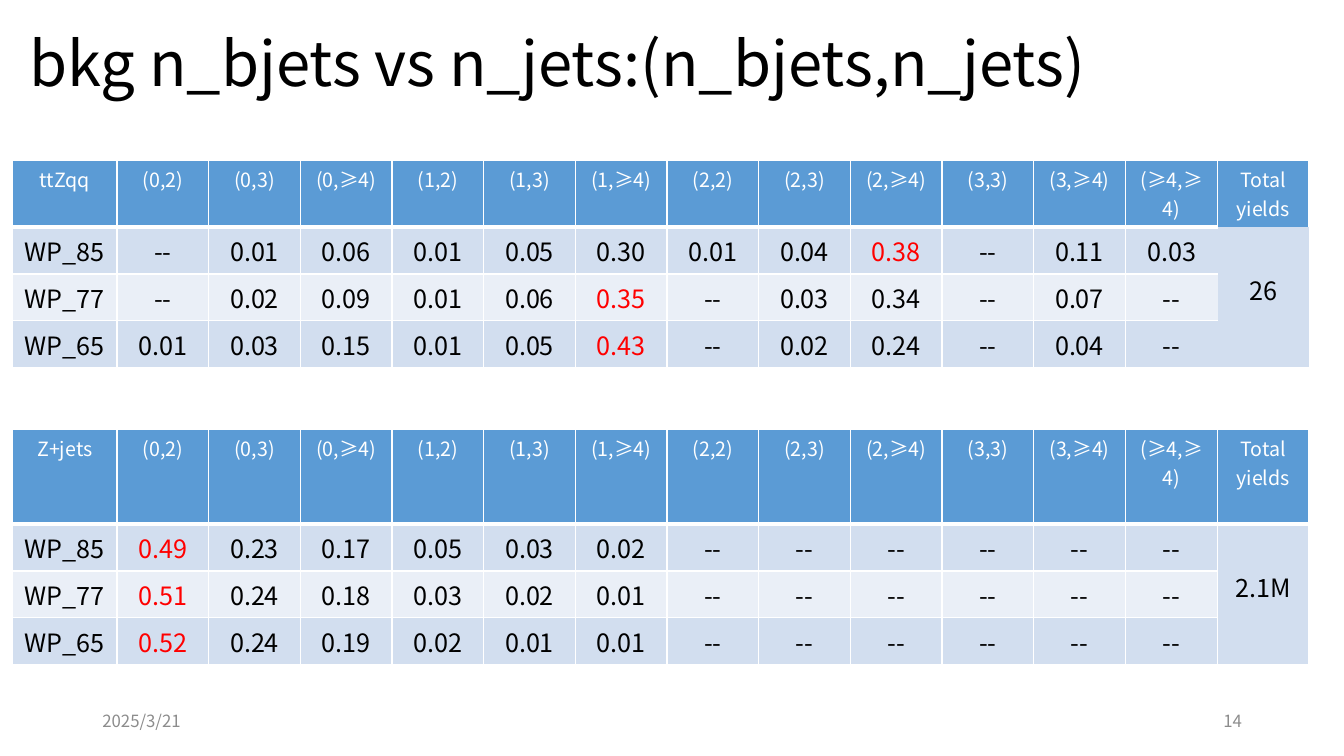
import pptx
import pptx.dml.color
import pptx.enum.text
import pptx.oxml
import pptx.oxml.ns
import pptx.util

Cm = pptx.util.Cm
Pt = pptx.util.Pt
RGBColor = pptx.dml.color.RGBColor
PP_ALIGN = pptx.enum.text.PP_ALIGN
MSO_ANCHOR = pptx.enum.text.MSO_ANCHOR

FONT = "Noto Sans CJK SC"
BLACK = RGBColor(0x00, 0x00, 0x00)
WHITE = RGBColor(0xFF, 0xFF, 0xFF)
RED = RGBColor(0xFF, 0x00, 0x00)
GREY = RGBColor(0x8C, 0x8C, 0x8C)
HEADER_BLUE = RGBColor(0x5B, 0x9B, 0xD5)
BANDS = [RGBColor(0xD2, 0xDE, 0xEF), RGBColor(0xEA, 0xEF, 0xF7)]

JET_BINS = ["(0,2)", "(0,3)", "(0,≥4)", "(1,2)", "(1,3)", "(1,≥4)", "(2,2)",
            "(2,3)", "(2,≥4)", "(3,3)", "(3,≥4)", "(≥4,≥4)"]
COLUMN_WIDTHS = [2.63] + [2.31] * 11 + [2.33, 2.29]
BODY_ROW_HEIGHT = 1.18
TTZQQ_FRACTIONS = {
    "WP_85": "-- 0.01 0.06 0.01 0.05 0.30 0.01 0.04 0.38 -- 0.11 0.03",
    "WP_77": "-- 0.02 0.09 0.01 0.06 0.35 -- 0.03 0.34 -- 0.07 --",
    "WP_65": "0.01 0.03 0.15 0.01 0.05 0.43 -- 0.02 0.24 -- 0.04 --",
}
ZJETS_FRACTIONS = {
    "WP_85": "0.49 0.23 0.17 0.05 0.03 0.02 -- -- -- -- -- --",
    "WP_77": "0.51 0.24 0.18 0.03 0.02 0.01 -- -- -- -- -- --",
    "WP_65": "0.52 0.24 0.19 0.02 0.01 0.01 -- -- -- -- -- --",
}


def set_attributes(target, values):
    for name, value in values.items():
        setattr(target, name, value)


def write_text(text_frame, text, size, color, **paragraph_format):
    paragraph = text_frame.paragraphs[0]
    set_attributes(paragraph, paragraph_format)
    run = paragraph.add_run()
    run.text = text
    set_attributes(run.font, {"name": FONT, "size": Pt(size), "bold": False})
    run.font.color.rgb = color
    east_asian = pptx.oxml.parse_xml(
        f'<a:ea {pptx.oxml.ns.nsdecls("a")} typeface="{FONT}"/>')
    run.font._element.find(pptx.oxml.ns.qn("a:latin")).addnext(east_asian)


def set_borders(cell, hidden="", bottom=1):
    """Draw white borders, leaving out the sides whose letters are in hidden."""
    properties = cell._tc.get_or_add_tcPr()
    for index, side in enumerate("LRTB"):
        width = Pt(bottom if side == "B" else 1)
        fill = ("<a:noFill/>" if side in hidden else
                f'<a:solidFill><a:srgbClr val="{WHITE}"/></a:solidFill>')
        properties.insert(index, pptx.oxml.parse_xml(
            f'<a:ln{side} {pptx.oxml.ns.nsdecls("a")} w="{width}">{fill}</a:ln{side}>'))


def fill_cell(cell, text, size, color, background):
    cell.fill.solid()
    cell.fill.fore_color.rgb = background
    write_text(cell.text_frame, text, size, color, alignment=PP_ALIGN.CENTER)


def add_title(slide, left, top, width, height, text):
    title = slide.shapes.title
    set_attributes(title, {"left": left, "top": top, "width": width, "height": height})
    set_attributes(title.text_frame, {
        "word_wrap": True,
        "auto_size": pptx.enum.text.MSO_AUTO_SIZE.NONE,
        "vertical_anchor": MSO_ANCHOR.MIDDLE,
    })
    write_text(title.text_frame, text, 44, BLACK,
               alignment=PP_ALIGN.LEFT, line_spacing=0.9)


def add_yield_table(slide, left, top, header_height, process, fractions, total,
                    open_total=False):
    """Add one process table; open_total drops the lines around its total."""
    row_heights = [header_height] + [BODY_ROW_HEIGHT] * len(fractions)
    table = slide.shapes.add_table(
        len(row_heights), len(COLUMN_WIDTHS), left, top,
        Cm(sum(COLUMN_WIDTHS)), Cm(sum(row_heights))).table
    for column, width in zip(table.columns, COLUMN_WIDTHS):
        column.width = Cm(width)
    for row, height in zip(table.rows, row_heights):
        row.height = Cm(height)

    last = len(COLUMN_WIDTHS) - 1
    for column, heading in enumerate([process, *JET_BINS, "Total yields"]):
        cell = table.cell(0, column)
        fill_cell(cell, heading, 14, WHITE, HEADER_BLUE)
        set_borders(cell, "B" if open_total and column == last else "", bottom=3)

    for row, (working_point, line) in enumerate(fractions.items(), start=1):
        values = line.split()
        largest = max(value for value in values if value != "--")
        for column, value in enumerate([working_point, *values]):
            cell = table.cell(row, column)
            fill_cell(cell, value, 18, RED if value == largest else BLACK,
                      BANDS[(row - 1) % 2])
            set_borders(cell, "R" if open_total and column == last - 1 else "")

    total_cell = table.cell(1, last)
    total_cell.merge(table.cell(len(fractions), last))
    fill_cell(total_cell, total, 18, BLACK, BANDS[0])
    set_borders(total_cell, "LRT" if open_total else "")
    set_attributes(total_cell, {"vertical_anchor": MSO_ANCHOR.MIDDLE,
                                "margin_bottom": Cm(0.53)})


def add_footer(slide, left, top, width, height, text, alignment):
    text_frame = slide.shapes.add_textbox(left, top, width, height).text_frame
    set_attributes(text_frame, {"word_wrap": True, "vertical_anchor": MSO_ANCHOR.MIDDLE})
    write_text(text_frame, text, 12, GREY, alignment=alignment)


def build_yields_slide(presentation):
    slide = presentation.slides.add_slide(presentation.slide_layouts[5])
    add_title(slide, Cm(0.48), Cm(0.46), Cm(27.15), Cm(2.44),
              "bkg n_bjets vs n_jets:(n_bjets,n_jets)")
    add_yield_table(slide, Cm(0.32), Cm(4.03), 1.69, "ttZqq", TTZQQ_FRACTIONS,
                    "26", open_total=True)
    add_yield_table(slide, Cm(0.32), Cm(10.81), 2.4, "Z+jets", ZJETS_FRACTIONS, "2.1M")
    footers = [(2.33, "2025/3/21", PP_ALIGN.LEFT), (23.93, "14", PP_ALIGN.RIGHT)]
    for left, text, alignment in footers:
        add_footer(slide, Cm(left), Cm(17.65), Cm(7.62), Cm(1.02), text, alignment)


def main():
    presentation = pptx.Presentation()
    set_attributes(presentation, {"slide_width": Cm(33.87), "slide_height": Cm(19.05)})
    build_yields_slide(presentation)
    presentation.save("out.pptx")


if __name__ == "__main__":
    main()
